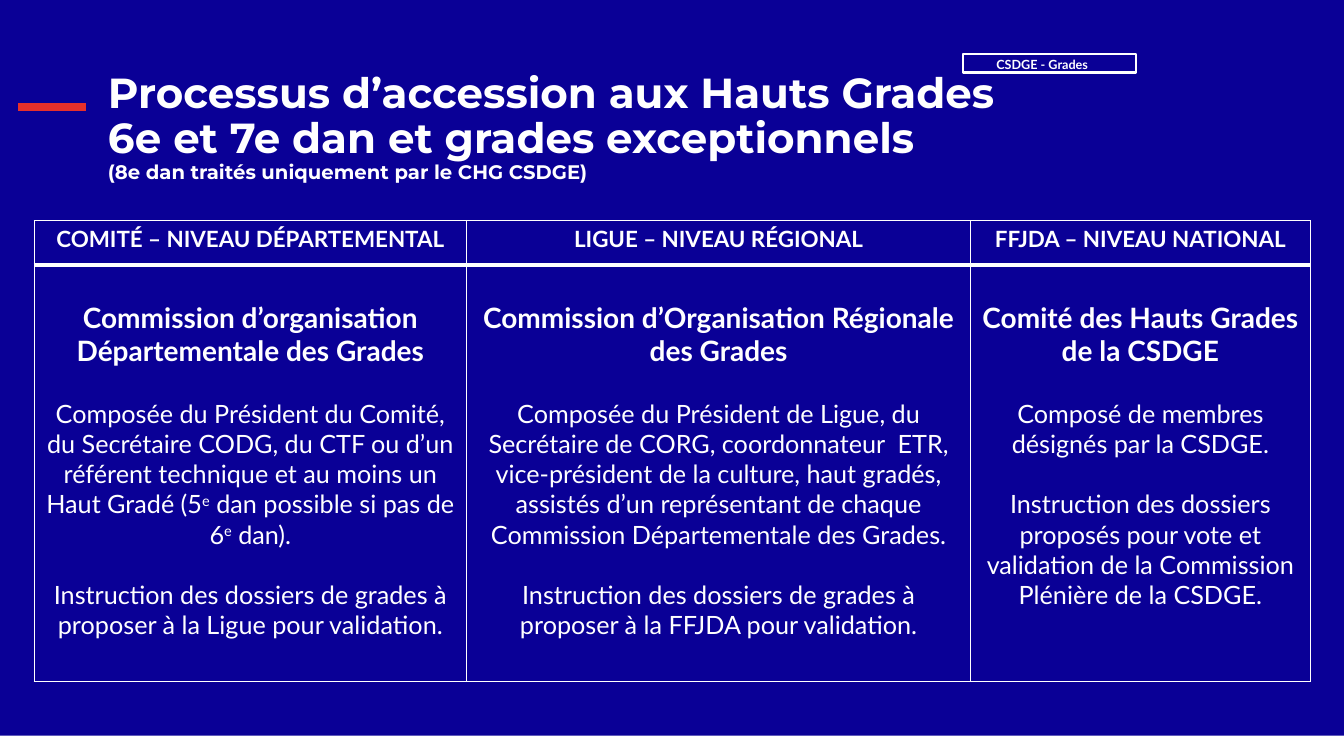
import pptx
import pptx.dml.color
import pptx.enum.shapes
import pptx.enum.text
import pptx.oxml.ns
import pptx.util
from lxml import etree

Cm, Pt = pptx.util.Cm, pptx.util.Pt
MSO_ANCHOR, PP_ALIGN = pptx.enum.text.MSO_ANCHOR, pptx.enum.text.PP_ALIGN
qn = pptx.oxml.ns.qn

COLORS = {"blue": "0A0096", "white": "FFFFFF", "red": "E7302A"}
COLUMN_WIDTHS = [10.9, 12.7, 8.56]
ROW_HEIGHTS = [1.12, 10.49]
LEVELS = [
    ("COMITÉ – NIVEAU DÉPARTEMENTAL", [
        "Commission d’organisation Départementale des Grades",
        "Composée du Président du Comité, du Secrétaire CODG, du CTF ou d’un référent technique "
        "et au moins un Haut Gradé (5^e^ dan possible si pas de 6^e^ dan).",
        "Instruction des dossiers de grades à proposer à la Ligue pour validation.",
    ]),
    ("LIGUE – NIVEAU RÉGIONAL", [
        "Commission d’Organisation Régionale des Grades",
        "Composée du Président de Ligue, du Secrétaire de CORG, coordonnateur  ETR, "
        "vice-président de la culture, haut gradés, assistés d’un représentant de chaque "
        "Commission Départementale des Grades.",
        "Instruction des dossiers de grades à proposer à la FFJDA pour validation.",
    ]),
    ("FFJDA – NIVEAU NATIONAL", [
        "Comité des Hauts Grades de la CSDGE",
        "Composé de membres désignés par la CSDGE.",
        "Instruction des dossiers proposés pour vote et validation de la Commission "
        "Plénière de la CSDGE.",
    ]),
]


def rgb(name):
    return pptx.dml.color.RGBColor.from_string(COLORS[name])


class Deck:
    """Hold the style and the current slide, and draw each kind of element."""

    def __init__(self):
        self.prs = pptx.Presentation()
        self.prs.slide_width, self.prs.slide_height = Cm(33.87), Cm(19.05)
        self.body_font, self.title_font = "Lato", "Montserrat"
        self.s = self.prs.slides.add_slide(self.prs.slide_layouts[5])
        self.s.background.fill.solid()
        self.s.background.fill.fore_color.rgb = rgb("blue")

    def style(self, r, size, bold=False, font=None):
        r.font.name = font or self.body_font
        r.font.size, r.font.bold = Pt(size), bold
        r.font.color.rgb = rgb("white")

    def frame(self, tf, left=0):
        tf.margin_left = Cm(left)
        tf.margin_top = tf.margin_right = tf.margin_bottom = 0
        tf.word_wrap = True
        tf.auto_size = pptx.enum.text.MSO_AUTO_SIZE.NONE

    def title(self, lines, sizes, left, top, width, height):
        sp = self.s.shapes.title
        sp.left, sp.top, sp.width, sp.height = map(Cm, (left, top, width, height))
        tf = sp.text_frame
        self.frame(tf)
        tf.vertical_anchor = MSO_ANCHOR.BOTTOM
        p = tf.paragraphs[0]
        p.text = "\v".join(lines)
        p.alignment, p.line_spacing = PP_ALIGN.LEFT, 0.9
        for r, size in zip(p.runs, sizes):
            self.style(r, size, True, self.title_font)
        for br, size in zip(p._p.findall(qn("a:br")), sizes):
            etree.SubElement(br, qn("a:rPr")).set("sz", str(size * 100))

    def rect(self, left, top, width, height, fill=None, line=None):
        sp = self.s.shapes.add_shape(
            pptx.enum.shapes.MSO_SHAPE.RECTANGLE, *map(Cm, (left, top, width, height)))
        sp.shadow.inherit = False
        if fill:
            sp.fill.solid()
            sp.fill.fore_color.rgb = rgb(fill)
        else:
            sp.fill.background()
        if line:
            sp.line.color.rgb, sp.line.width = rgb(line), Pt(1.5)
        else:
            sp.line.fill.background()
        return sp

    def tag(self, text, left, top, width, height):
        tf = self.rect(left, top, width, height, line="white").text_frame
        self.frame(tf, 0.85)
        tf.vertical_anchor = MSO_ANCHOR.MIDDLE
        p = tf.paragraphs[0]
        p.text = text
        p.alignment, p.line_spacing = PP_ALIGN.LEFT, 1.15
        self.style(p.runs[0], 9, True)

    def dash(self, left, y, right):
        line = self.s.shapes.add_connector(
            pptx.enum.shapes.MSO_CONNECTOR.STRAIGHT, *map(Cm, (left, y, right, y)))
        line.line.color.rgb, line.line.width = rgb("red"), Pt(6)
        etree.SubElement(line._element.spPr, qn("a:effectLst"))

    def borders(self, cell, top, bottom):
        tcPr = cell._tc.get_or_add_tcPr()
        for i, (side, width) in enumerate(zip("LRTB", (1, 1, top, bottom))):
            ln = etree.Element(qn(f"a:ln{side}"), w=str(Pt(width)))
            fill = etree.SubElement(ln, qn("a:solidFill"))
            etree.SubElement(fill, qn("a:srgbClr"), val=COLORS["white"])
            tcPr.insert(i, ln)

    def cell(self, cell, texts, sizes, top, bottom):
        cell.fill.solid()
        cell.fill.fore_color.rgb = rgb("blue")
        self.borders(cell, top, bottom)
        tf = cell.text_frame
        tf.text = "\n".join(text.replace("^", "") for text in texts)
        for i, (p, text, size) in enumerate(zip(tf.paragraphs, texts, sizes)):
            p.alignment = PP_ALIGN.CENTER
            if i:
                p.space_before = Pt(21.6)
            pieces = text.split("^")
            p.text = pieces[0]
            for piece in pieces[1:]:
                p.add_run().text = piece
            for j, r in enumerate(p.runs):
                self.style(r, size, i == 0)
                if j % 2:
                    r.font._element.set("baseline", "30000")

    def table(self, levels, left, top):
        size = sum(COLUMN_WIDTHS), sum(ROW_HEIGHTS)
        table = self.s.shapes.add_table(
            2, len(levels), *map(Cm, (left, top, *size))).table
        table.first_row = table.horz_banding = False
        for row, height in zip(table.rows, ROW_HEIGHTS):
            row.height = Cm(height)
        for i, (heading, texts) in enumerate(levels):
            table.columns[i].width = Cm(COLUMN_WIDTHS[i])
            self.cell(table.cell(0, i), [heading], [16], 1, 3)
            body = table.cell(1, i)
            self.cell(body, texts, [20, 18, 18], 3, 1)
            body.margin_top = Cm(0.89)


def main():
    deck = Deck()
    deck.rect(0, 18.54, 33.87, 0.51, fill="white")
    deck.tag("CSDGE - Grades", 24.26, 1.37, 4.37, 0.46)
    deck.dash(0.46, 2.69, 2.16)
    deck.title(
        ["Processus d’accession aux Hauts Grades",
         "6e et 7e dan et grades exceptionnels",
         "(8e dan traités uniquement par le CHG CSDGE)"],
        [30, 30, 14], 2.72, 3.18, 27.53, 1.45)
    deck.table(LEVELS, 0.86, 5.56)
    deck.prs.save("out.pptx")


if __name__ == "__main__":
    main()
